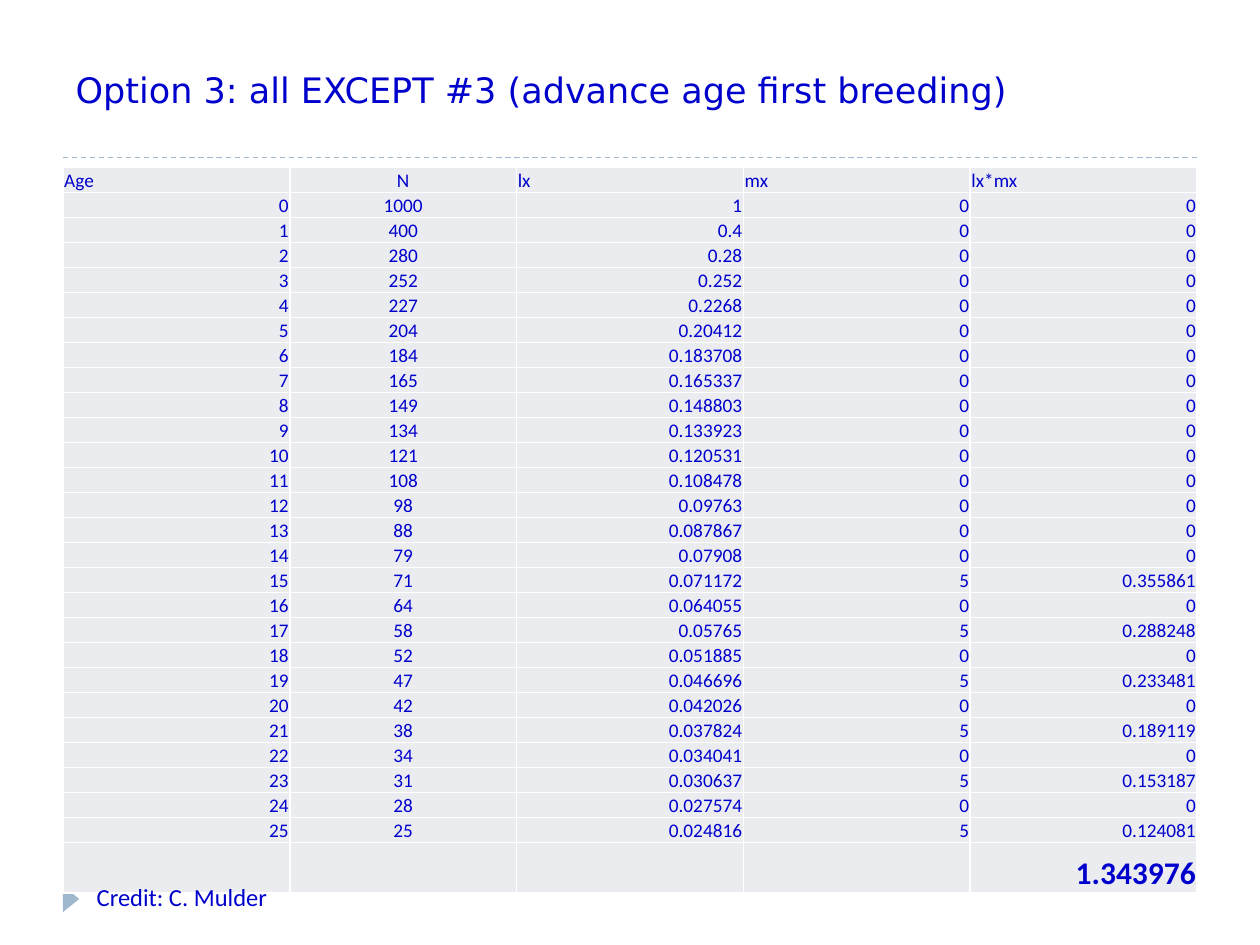
from dataclasses import dataclass

from lxml import etree
from pptx import Presentation
from pptx.dml.color import RGBColor
from pptx.enum.dml import MSO_LINE
from pptx.enum.shapes import MSO_CONNECTOR, MSO_SHAPE
from pptx.enum.text import MSO_ANCHOR, MSO_AUTO_SIZE, PP_ALIGN
from pptx.oxml.ns import qn
from pptx.oxml.xmlchemy import OxmlElement
from pptx.util import Pt

LEFT, MID, RIGHT = PP_ALIGN.LEFT, PP_ALIGN.CENTER, PP_ALIGN.RIGHT
CENTER, BOTTOM = MSO_ANCHOR.MIDDLE, MSO_ANCHOR.BOTTOM
NO_FIT, DASH = MSO_AUTO_SIZE.NONE, MSO_LINE.DASH
STRAIGHT, WEDGE = MSO_CONNECTOR.STRAIGHT, MSO_SHAPE.ISOSCELES_TRIANGLE


@dataclass(frozen=True)
class Theme:
    ink: str = "0000CC"
    cell: str = "EBECF0"
    edge: str = "FFFFFF"
    trim: str = "9FB8CD"
    head: str = "DejaVu Sans"
    body: str = "Calibri"
    title: int = 20
    small: int = 11
    total: int = 18
    credit: int = 14


@dataclass(frozen=True)
class Box:
    left: float
    top: float
    width: float
    height: float


@dataclass(frozen=True)
class Age:
    n: str
    lx: str
    mx: str = "0"
    yield_: str = "0"


THEME = Theme()
HEADS = ("Age", "N", "lx", "mx", "lx*mx")
TOTAL = "1.343976"
AGES = (
    Age("1000", "1"),
    Age("400", "0.4"),
    Age("280", "0.28"),
    Age("252", "0.252"),
    Age("227", "0.2268"),
    Age("204", "0.20412"),
    Age("184", "0.183708"),
    Age("165", "0.165337"),
    Age("149", "0.148803"),
    Age("134", "0.133923"),
    Age("121", "0.120531"),
    Age("108", "0.108478"),
    Age("98", "0.09763"),
    Age("88", "0.087867"),
    Age("79", "0.07908"),
    Age("71", "0.071172", "5", "0.355861"),
    Age("64", "0.064055"),
    Age("58", "0.05765", "5", "0.288248"),
    Age("52", "0.051885"),
    Age("47", "0.046696", "5", "0.233481"),
    Age("42", "0.042026"),
    Age("38", "0.037824", "5", "0.189119"),
    Age("34", "0.034041"),
    Age("31", "0.030637", "5", "0.153187"),
    Age("28", "0.027574"),
    Age("25", "0.024816", "5", "0.124081"),
)
ROW, LAST = 13.8, 28.8
GRID = Box(36, 95.8, 648, ROW * (len(AGES) + 1) + LAST)


def place(shape, box: Box) -> None:
    shape.left, shape.top = Pt(box.left), Pt(box.top)
    shape.width, shape.height = Pt(box.width), Pt(box.height)


def write(frame, text: str, face: str, size: int, align=LEFT, bold: bool = False) -> None:
    para = frame.paragraphs[0]
    para.alignment = align
    run = para.add_run()
    run.text = text
    run.font.name, run.font.size, run.font.bold = face, Pt(size), bold
    run.font.color.rgb = RGBColor.from_string(THEME.ink)


def add_title(slide, text: str, box: Box) -> None:
    title = slide.shapes.title
    place(title, box)
    frame = title.text_frame
    frame.auto_size, frame.vertical_anchor = NO_FIT, CENTER
    frame.word_wrap = True
    write(frame, text, THEME.head, THEME.title)


def add_rule(slide, top: float) -> None:
    rule = slide.shapes.add_connector(
        STRAIGHT, Pt(GRID.left), Pt(top), Pt(GRID.left + GRID.width), Pt(top))
    rule.line.color.rgb = RGBColor.from_string(THEME.trim)
    rule.line.width, rule.line.dash_style = Pt(0.75), DASH
    etree.SubElement(rule.element.spPr, qn("a:effectLst"))


def add_wedge(slide, box: Box) -> None:
    wedge = slide.shapes.add_shape(WEDGE, 0, 0, 0, 0)
    place(wedge, box)
    wedge.rotation = 90
    wedge.shadow.inherit = False
    wedge.fill.solid()
    wedge.fill.fore_color.rgb = RGBColor.from_string(THEME.trim)
    wedge.line.fill.background()


def style_cell(cell) -> None:
    props = cell._tc.get_or_add_tcPr()
    for side in ("lnL", "lnR", "lnT", "lnB"):
        edge = OxmlElement(f"a:{side}")
        edge.set("w", str(Pt(1)))
        fill = etree.SubElement(edge, qn("a:solidFill"))
        etree.SubElement(fill, qn("a:srgbClr")).set("val", THEME.edge)
        props.append(edge)
    cell.fill.solid()
    cell.fill.fore_color.rgb = RGBColor.from_string(THEME.cell)
    cell.margin_left = cell.margin_right = cell.margin_top = Pt(0.7)
    cell.margin_bottom = 0
    cell.vertical_anchor = BOTTOM


def add_grid(slide) -> None:
    rows = [HEADS]
    rows += [(str(i), age.n, age.lx, age.mx, age.yield_) for i, age in enumerate(AGES)]
    rows.append(("", "", "", "", TOTAL))
    frame = slide.shapes.add_table(len(rows), len(HEADS), 0, 0, 0, 0)
    place(frame, GRID)
    table = frame.table
    table.first_row = table.horz_banding = False
    for col in table.columns:
        col.width = Pt(GRID.width / len(HEADS))
    end = len(rows) - 1
    for r, row in enumerate(rows):
        table.rows[r].height = Pt(LAST if r == end else ROW)
        for c, text in enumerate(row):
            cell = table.cell(r, c)
            style_cell(cell)
            if text:
                align = MID if c == 1 else LEFT if r == 0 else RIGHT
                size = THEME.total if r == end else THEME.small
                write(cell.text_frame, text, THEME.body, size, align, r == end)


def add_credit(slide, text: str, box: Box) -> None:
    note = slide.shapes.add_textbox(0, 0, 0, 0)
    place(note, box)
    note.text_frame.word_wrap = True
    write(note.text_frame, text, THEME.body, THEME.credit)


def main() -> None:
    deck = Presentation()
    deck.slide_width, deck.slide_height = Pt(720), Pt(540)
    slide = deck.slides.add_slide(deck.slide_layouts[5])
    for top in (500.4, 90):
        add_rule(slide, top)
    add_wedge(slide, Box(33.1, 509, 15, 9.4))
    add_title(slide, "Option 3: all EXCEPT #3 (advance age first breeding)",
              Box(36, 12.2, 648, 77.8))
    add_grid(slide)
    add_credit(slide, "Credit: C. Mulder", Box(48.2, 500.4, 156.2, 28.8))
    deck.save("out.pptx")


if __name__ == "__main__":
    main()
